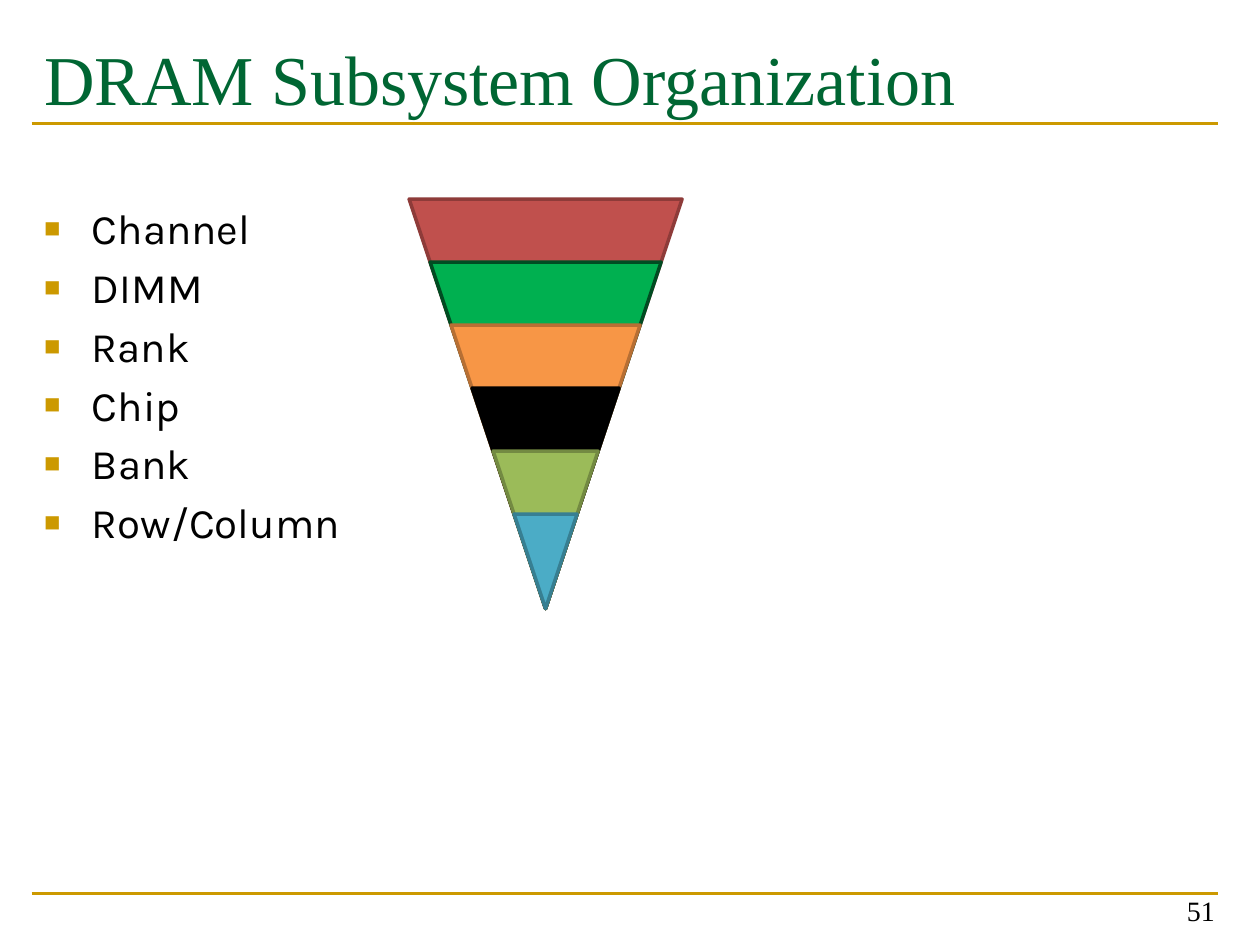
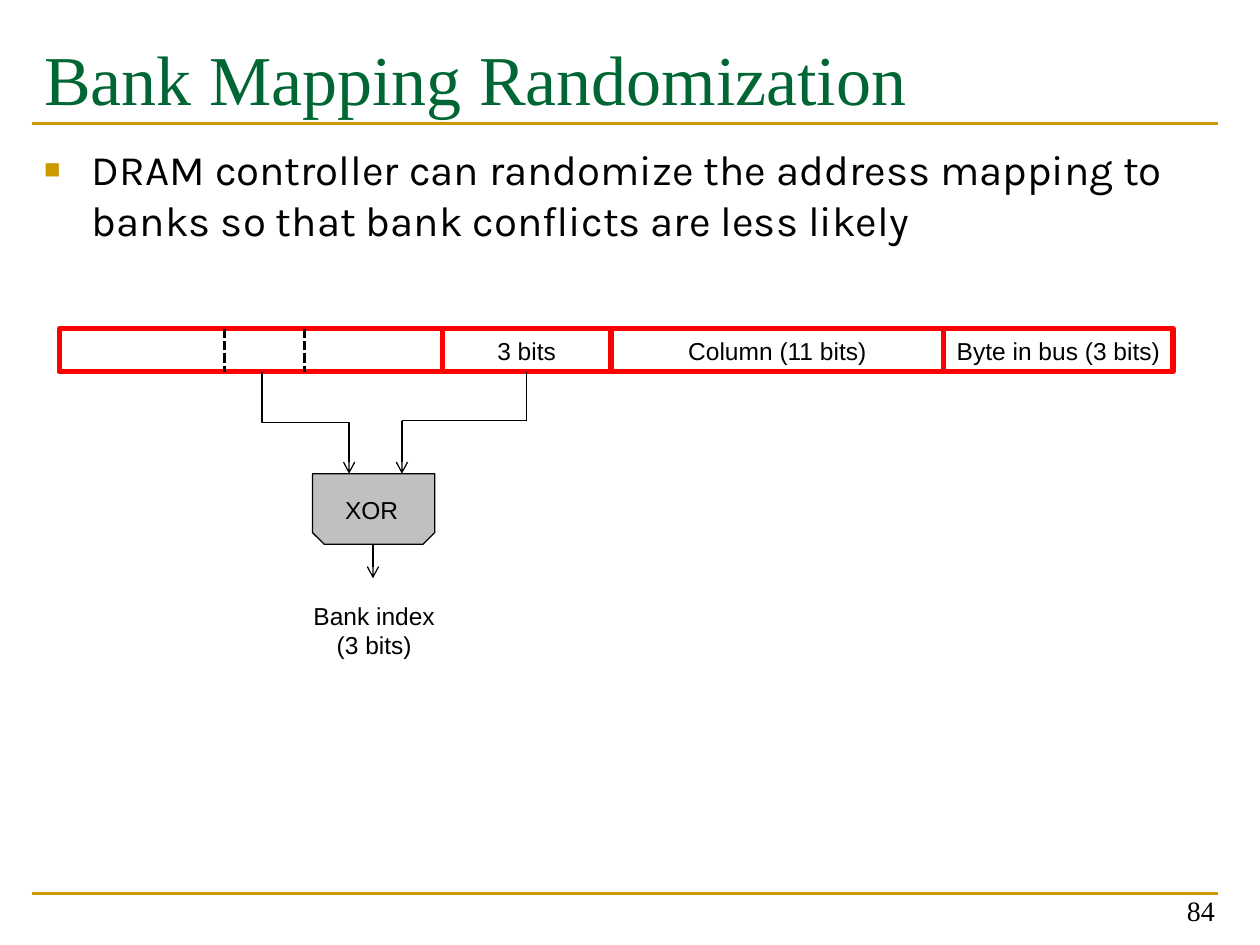
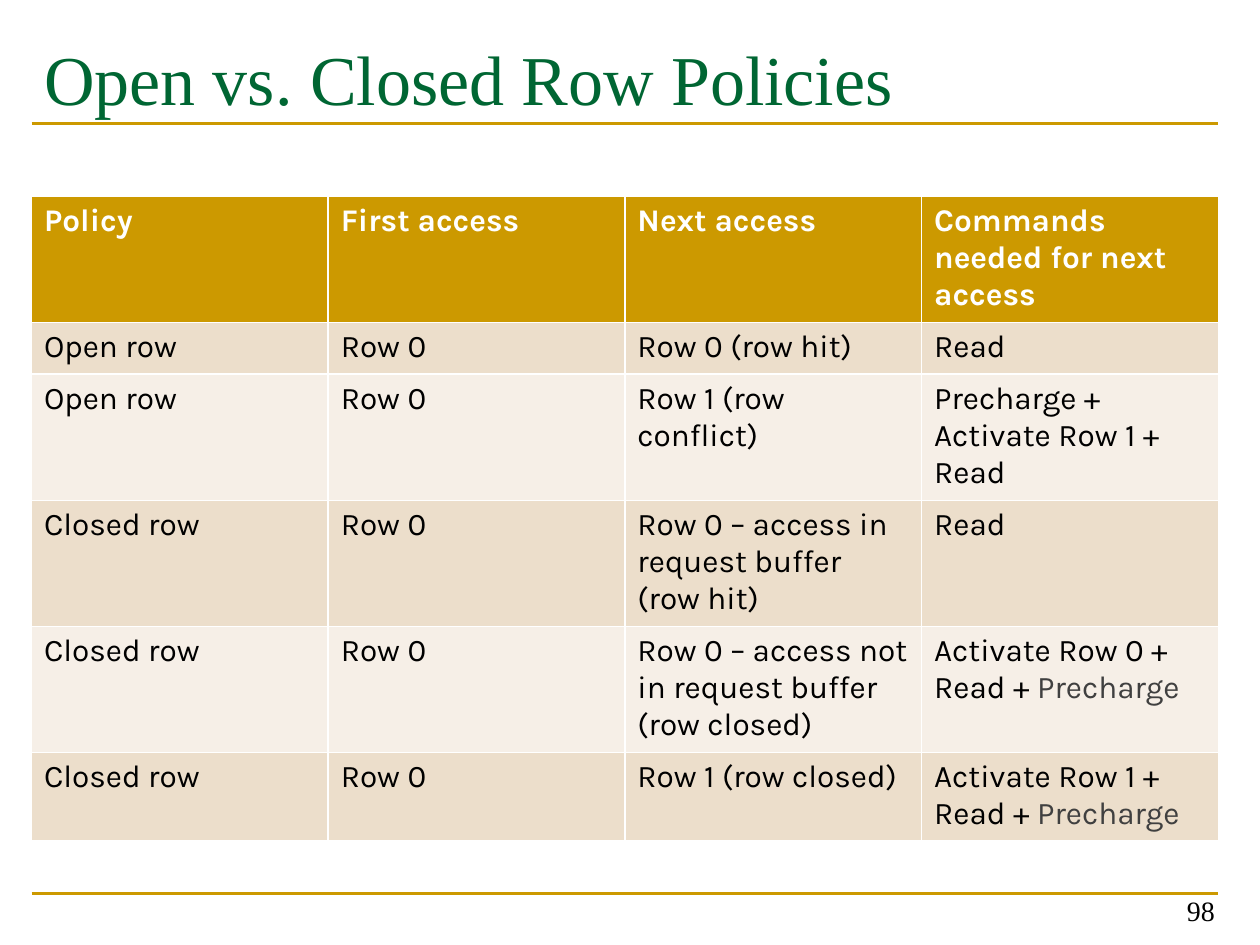
from lxml import etree
from pptx import Presentation
from pptx.dml.color import RGBColor
from pptx.enum.dml import MSO_LINE
from pptx.enum.shapes import MSO_CONNECTOR as LINK, MSO_SHAPE as SHAPE
from pptx.enum.text import MSO_ANCHOR as ANCHOR, MSO_AUTO_SIZE as AUTOSIZE, PP_ALIGN as ALIGN
from pptx.oxml.ns import qn
from pptx.util import Inches, Pt

COLORS = {
    "title": "006633", "gold": "CC9900", "ink": "000000", "white": "FFFFFF",
    "muted": "404040", "field": "FF0000", "gate": "C0C0C0",
    "dark_band": "ECDECB", "light_band": "F6EFE7",
}
RGB = {name: RGBColor.from_string(value) for name, value in COLORS.items()}

STYLES = {
    "title": {"name": "Times New Roman", "size": Pt(40)},
    "body": {"name": "Karla", "size": Pt(24)},
    "page": {"name": "Times New Roman", "size": Pt(16)},
    "label": {"name": "Arial", "size": Pt(14)},
    "cell": {"name": "Karla", "size": Pt(18), "bold": False},
    "header": {"name": "Karla", "size": Pt(18), "bold": True},
}


def write(frame, text, style, color="ink", align=ALIGN.LEFT):
    """Fill a text frame, one paragraph a line; what follows a bar is muted."""
    frame.word_wrap = True
    for number, line in enumerate(text.split("\n")):
        para = frame.add_paragraph() if number else frame.paragraphs[0]
        para.alignment = align
        for part, part_color in zip(line.split("|"), (color, "muted")):
            span = para.add_run()
            span.text = part
            for name, value in STYLES[style].items():
                setattr(span.font, name, value)
            span.font.color.rgb = RGB[part_color]


def draw_line(page, start, end, color="ink", weight=0.75, arrow=False, kind=LINK.STRAIGHT):
    line = page.shapes.add_connector(kind, *map(Inches, start + end))
    line.line.color.rgb = RGB[color]
    line.line.width = Pt(weight)
    if arrow:
        etree.SubElement(line.line._get_or_add_ln(), qn("a:tailEnd"), type="arrow")
    etree.SubElement(line.element.spPr, qn("a:effectLst"))
    return line


deck = Presentation()
deck.slide_width, deck.slide_height = Inches(10), Inches(7.5)

# Shared frame: title, rules, page number and bulleted body
PAGES = [
    ("DRAM Subsystem Organization", "51", 1.56,
     "Channel\nDIMM\nRank\nChip\nBank\nRow/Column"),
    ("Bank Mapping Randomization", "84", 1.09,
     "DRAM controller can randomize the address mapping to banks "
     "so that bank conflicts are less likely"),
    ("Open vs. Closed Row Policies", "98", None, None),
]
BODY_BOTTOM = 6.77
pages = []
for title_text, page_number, body_top, body_text in PAGES:
    page = deck.slides.add_slide(deck.slide_layouts[1 if body_text else 5])
    pages.append(page)
    for y in (7.09, 0.98):
        draw_line(page, (0.25, y), (9.67, y), "gold", 1.5)

    title = page.shapes.title
    title.left, title.top, title.width, title.height = map(Inches, (0.25, 0.17, 9.42, 1.17))
    title.text_frame.vertical_anchor = ANCHOR.TOP
    title.text_frame.margin_top = Inches(0.11)
    title.text_frame.auto_size = AUTOSIZE.NONE
    write(title.text_frame, title_text, "title", "title")

    number_box = page.shapes.add_textbox(*map(Inches, (7.41, 6.91, 2.33, 0.5)))
    number_box.text_frame.vertical_anchor = ANCHOR.BOTTOM
    write(number_box.text_frame, page_number, "page", align=ALIGN.RIGHT)

    if body_text:
        body = page.placeholders[1]
        body.left, body.top, body.width, body.height = map(
            Inches, (0.25, body_top, 9.42, BODY_BOTTOM - body_top))
        body.text_frame.auto_size = AUTOSIZE.NONE
        write(body.text_frame, body_text, "body")
        for para in body.text_frame.paragraphs:
            para.space_before = Pt(4.8)
            props = para._p.get_or_add_pPr()
            props.set("marL", str(Inches(0.38)))
            props.set("indent", str(-Inches(0.38)))
            bullet_color = etree.SubElement(props, qn("a:buClr"))
            etree.SubElement(bullet_color, qn("a:srgbClr"), val=COLORS["gold"])
            etree.SubElement(props, qn("a:buSzPct"), val="65000")
            etree.SubElement(props, qn("a:buFont"), typeface="Arial")
            etree.SubElement(props, qn("a:buChar"), char="■")

organization, mapping, policies = pages

# Nested triangles sharing one tip, from channel down to row and column
LEVELS = [
    ("C0504D", "8E3B39"), ("00B050", "004C22"), ("F79646", "B76F34"),
    ("000000", "000000"), ("9BBB59", "738A42"), ("4BACC6", "377F92"),
]
for level, (fill, outline) in enumerate(LEVELS):
    height = 3.25 - 0.5 * level
    width = height * 2 / 3
    triangle = organization.shapes.add_shape(
        SHAPE.FLOWCHART_MERGE,
        *map(Inches, (4.33 - width / 2, 4.83 - height, width, height)))
    triangle.shadow.inherit = False
    triangle.fill.solid()
    triangle.fill.fore_color.rgb = RGBColor.from_string(fill)
    triangle.line.color.rgb = RGBColor.from_string(outline)
    triangle.line.width = Pt(2)

# Address fields, left to right
ADDRESS_TOP, ADDRESS_HEIGHT = 2.61, 0.34
ADDRESS_BOTTOM = ADDRESS_TOP + ADDRESS_HEIGHT
FIELDS = [("", 3.04), ("3 bits", 1.34), ("Column (11 bits)", 2.64), ("Byte in bus (3 bits)", 1.82)]
fields = []
left = 0.47
for text, width in FIELDS:
    field = mapping.shapes.add_shape(
        SHAPE.RECTANGLE, *map(Inches, (left, ADDRESS_TOP, width, ADDRESS_HEIGHT)))
    field.shadow.inherit = False
    field.fill.background()
    field.line.color.rgb = RGB["field"]
    field.line.width = Pt(3)
    if text:
        field.text_frame.margin_left = field.text_frame.margin_right = Inches(0.05)
        write(field.text_frame, text, "label", align=ALIGN.CENTER)
    fields.append(field)
    left += width
for x in (1.78, 2.42):
    divider = draw_line(mapping, (x, ADDRESS_TOP), (x, ADDRESS_BOTTOM), weight=1.75)
    divider.line.dash_style = MSO_LINE.SQUARE_DOT

# XOR gate with its two inputs and its output
gate = mapping.shapes.add_shape(SHAPE.SNIP_2_SAME_RECTANGLE, *map(Inches, (2.48, 3.76, 0.97, 0.56)))
gate.rotation = 180
gate.shadow.inherit = False
gate.fill.solid()
gate.fill.fore_color.rgb = RGB["gate"]
gate.line.color.rgb = RGB["ink"]
gate.line.width = Pt(0.75)

row_input = draw_line(mapping, (2.83, 3.01), (2.02, 3.7), arrow=True, kind=LINK.ELBOW)
row_input.element.spPr.find(qn("a:xfrm")).set("rot", str(270 * 60000))
bank_input = draw_line(mapping, (4.18, ADDRESS_BOTTOM), (4.18, 3.34))
bank_input.begin_connect(fields[1], 2)
draw_line(mapping, (4.18, 3.34), (3.19, 3.34))
draw_line(mapping, (3.19, 3.34), (3.19, 3.76), arrow=True)
draw_line(mapping, (2.96, 4.32), (2.96, 4.59), arrow=True)

for text, place in [("XOR", (2.42, 3.88, 1.06, 0.34)),
                    ("Bank index (3 bits)", (2.3, 4.72, 1.34, 0.57))]:
    label = mapping.shapes.add_textbox(*map(Inches, place))
    write(label.text_frame, text, "label", align=ALIGN.CENTER)

# Policy table
POLICY_ROWS = [
    (1, "Policy", "First access", "Next access", "Commands needed for next access"),
    (0.41, "Open row", "Row 0", "Row 0 (row hit)", "Read"),
    (1, "Open row", "Row 0", "Row 1 (row conflict)", "Precharge + Activate Row 1 +\nRead"),
    (1, "Closed row", "Row 0", "Row 0 – access in request buffer\n(row hit)", "Read"),
    (1, "Closed row", "Row 0", "Row 0 – access not in request buffer (row closed)",
     "Activate Row 0 + Read + |Precharge"),
    (0.7, "Closed row", "Row 0", "Row 1 (row closed)", "Activate Row 1 + Read + |Precharge"),
]
table = policies.shapes.add_table(
    len(POLICY_ROWS), 4, *map(Inches, (0.25, 1.56, 9.42, 5.11))).table
for row_index, (height, *texts) in enumerate(POLICY_ROWS):
    table.rows[row_index].height = Inches(height)
    if row_index == 0:
        fill, style, color = "gold", "header", "white"
    else:
        fill, style, color = "dark_band" if row_index % 2 else "light_band", "cell", "ink"
    for column_index, text in enumerate(texts):
        cell = table.cell(row_index, column_index)
        cell.fill.solid()
        cell.fill.fore_color.rgb = RGB[fill]
        write(cell.text_frame, text, style, color)

deck.save("out.pptx")
